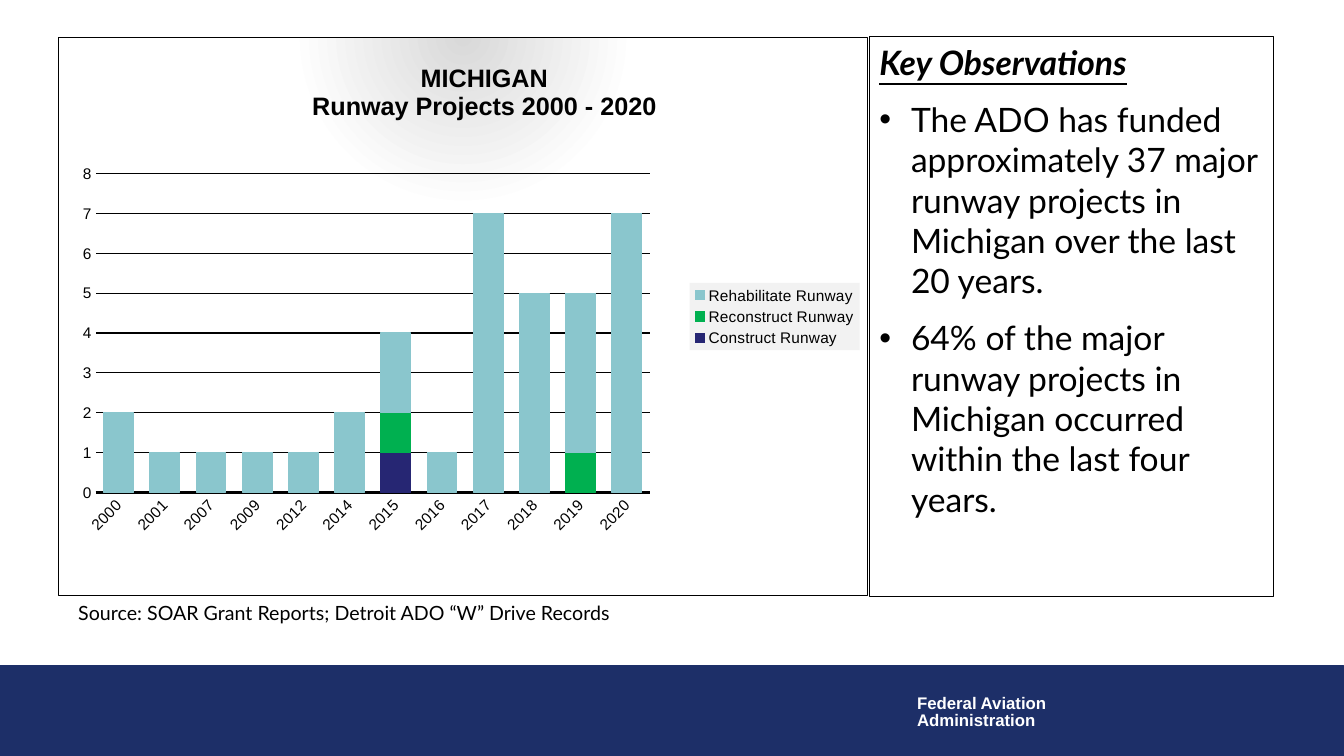
from dataclasses import dataclass

from lxml.etree import SubElement
from pptx import Presentation
from pptx.chart.data import CategoryChartData
from pptx.dml.color import RGBColor
from pptx.enum.chart import XL_CHART_TYPE, XL_LEGEND_POSITION, XL_TICK_MARK
from pptx.enum.shapes import MSO_SHAPE
from pptx.enum.text import MSO_AUTO_SIZE, MSO_ANCHOR, PP_ALIGN
from pptx.oxml import parse_xml
from pptx.oxml.ns import nsdecls, qn
from pptx.util import Emu, Pt

PX = 9525


@dataclass(frozen=True)
class Theme:
    ink: str = "000000"
    paper: str = "FFFFFF"
    banner: str = "1D2F68"
    construct: str = "262673"
    reconstruct: str = "00B050"
    rehabilitate: str = "8AC6CD"
    glow: str = "D9D9D9"
    legend: str = "F2F2F2"
    body_font: str = "Lato"
    chart_font: str = "Arial"
    body_size: int = 24
    title_size: int = 18
    source_size: int = 14
    agency_size: int = 12
    axis_size: int = 11
    thin: float = 0.75
    thick: float = 2


THEME = Theme()

YEARS = ["2000", "2001", "2007", "2009", "2012", "2014",
         "2015", "2016", "2017", "2018", "2019", "2020"]
PROJECTS = [
    ("Construct Runway", THEME.construct, {"2015": 1}),
    ("Reconstruct Runway", THEME.reconstruct, {"2015": 1, "2019": 1}),
    ("Rehabilitate Runway", THEME.rehabilitate,
     dict(zip(YEARS, [2, 1, 1, 1, 1, 2, 2, 1, 7, 5, 4, 7]))),
]
OBSERVATIONS = [
    "The ADO has funded approximately 37 major runway projects in Michigan "
    "over the last 20 years.",
    "64% of the major runway projects in Michigan occurred within the last "
    "four years.",
]


def px(*lengths):
    return [Emu(length * PX) for length in lengths]


def style_font(font, size, name, color=THEME.ink, bold=False, italic=False,
               underline=False):
    font.size, font.name = Pt(size), name
    font.bold, font.italic, font.underline = bold, italic, underline
    font.color.rgb = RGBColor.from_string(color)


def style_line(line, color=THEME.ink, width=THEME.thin):
    line.color.rgb = RGBColor.from_string(color)
    line.width = Pt(width)


def style_fill(fill, color):
    fill.solid()
    fill.fore_color.rgb = RGBColor.from_string(color)


def set_bullet(para, bullet, indent):
    """Hang the text behind a bullet; an empty bullet removes the inherited one."""
    properties = para._p.get_or_add_pPr()
    properties.set("marL", str(indent * PX))
    properties.set("indent", str(-indent * PX))
    if bullet:
        SubElement(properties, qn("a:buFont"), typeface="Arial")
        SubElement(properties, qn("a:buChar"), char=bullet)
    else:
        SubElement(properties, qn("a:buNone"))


def write(frame, text, size, name, bullet=None, indent=0, before=0,
          spacing=None, align=PP_ALIGN.LEFT, **font_format):
    """Fill the empty first paragraph of a frame, or add another one."""
    para = frame.paragraphs[0]
    if para.runs:
        para = frame.add_paragraph()
    if bullet is not None:
        set_bullet(para, bullet, indent)
    para.alignment = align
    para.space_before = Pt(before)
    if spacing:
        para.line_spacing = spacing
    span = para.add_run()
    span.text = text
    style_font(span.font, size, name, **font_format)


def add_text_box(page, place, wrap=True):
    frame = page.shapes.add_textbox(*px(*place)).text_frame
    frame.word_wrap = wrap
    return frame


def add_banner(page):
    banner = page.shapes.add_shape(MSO_SHAPE.RECTANGLE, *px(0, 634, 1280, 86))
    banner.shadow.inherit = False
    style_fill(banner.fill, THEME.banner)
    style_line(banner.line, THEME.banner)
    frame = add_text_box(page, (864, 658, 144, 42), wrap=False)
    for line in ("Federal Aviation", "Administration"):
        write(frame, line, THEME.agency_size, THEME.chart_font,
              color=THEME.paper, bold=True, spacing=0.85)


def add_observations(page):
    box = page.placeholders[1]
    box.left, box.top, box.width, box.height = px(828, 35, 385, 533)
    style_line(box.line)
    frame = box.text_frame
    frame.word_wrap = True
    frame.auto_size = MSO_AUTO_SIZE.NONE
    frame.vertical_anchor = MSO_ANCHOR.TOP
    write(frame, "Key Observations", THEME.body_size, THEME.body_font,
          bullet="", bold=True, italic=True, underline=True)
    for observation in OBSERVATIONS:
        write(frame, observation, THEME.body_size, THEME.body_font,
              bullet="•", indent=30, before=THEME.body_size / 2)


def place_part(chart, tag, inner=False, **fractions):
    """Set the manual layout of a chart part as fractions of the chart."""
    part = chart.element.find(f".//{qn(tag)}")
    for old in part.findall(qn("c:layout")):
        part.remove(old)
    layout = parse_xml(f"<c:layout {nsdecls('c')}><c:manualLayout/></c:layout>")
    if inner:
        SubElement(layout[0], qn("c:layoutTarget"), val="inner")
    for side in ("x", "y"):
        SubElement(layout[0], qn(f"c:{side}Mode"), val="edge")
    for side, fraction in fractions.items():
        SubElement(layout[0], qn(f"c:{side}"), val=str(fraction))
    overlay = part.find(qn("c:overlay"))
    part.insert(0 if overlay is None else part.index(overlay), layout)


def shape_properties(content):
    return parse_xml(f"<c:spPr {nsdecls('c', 'a')}>{content}</c:spPr>")


def solid(color):
    return f'<a:solidFill><a:srgbClr val="{color}"/></a:solidFill>'


def paint_chart_area(chart):
    """Give the chart a thin border and a soft glow behind its title."""
    stops = "".join(
        f'<a:gs pos="{position * 1000}"><a:srgbClr val="{color}"/></a:gs>'
        for position, color in ((0, THEME.glow), (35, THEME.paper),
                                (100, THEME.paper)))
    chart.element.find(qn("c:chart")).addnext(shape_properties(
        f'<a:gradFill><a:gsLst>{stops}</a:gsLst><a:path path="circle">'
        '<a:fillToRect l="50000" t="-80000" r="50000" b="180000"/></a:path>'
        f'</a:gradFill><a:ln w="{Pt(THEME.thin)}">{solid(THEME.ink)}</a:ln>'))


def style_axes(chart):
    years, counts = chart.category_axis, chart.value_axis
    for axis in (years, counts):
        axis.major_tick_mark = axis.minor_tick_mark = XL_TICK_MARK.NONE
        style_font(axis.tick_labels.font, THEME.axis_size, THEME.chart_font)
    style_line(years.format.line, width=THEME.thick)
    labels = chart.element.find(f".//{qn('c:catAx')}/{qn('c:txPr')}")
    labels.find(qn("a:bodyPr")).set("rot", "-2700000")
    counts.minimum_scale, counts.maximum_scale, counts.major_unit = 0, 8, 1
    counts.format.line.fill.background()
    style_line(counts.major_gridlines.format.line)


def add_project_chart(page):
    data = CategoryChartData(number_format="0")
    data.categories = YEARS
    for name, _, counts in PROJECTS:
        data.add_series(name, [counts.get(year) for year in YEARS])
    chart = page.shapes.add_chart(XL_CHART_TYPE.COLUMN_STACKED,
                                  *px(55, 35, 772, 533), data).chart
    style_font(chart.font, 10, THEME.chart_font)
    plot = chart.plots[0]
    plot.gap_width, plot.overlap, plot.vary_by_categories = 55, 100, False
    for series, (_, color, _) in zip(plot.series, PROJECTS):
        style_fill(series.format.fill, color)
        style_line(series.format.line, color)
    style_axes(chart)

    chart.has_title = True
    for line in ("MICHIGAN", "Runway Projects 2000 - 2020"):
        write(chart.chart_title.text_frame, line, THEME.title_size,
              THEME.chart_font, align=PP_ALIGN.CENTER, bold=True)
    chart.has_legend = True
    chart.legend.position = XL_LEGEND_POSITION.RIGHT
    chart.legend.include_in_layout = False
    style_font(chart.legend.font, THEME.axis_size, THEME.chart_font)
    chart.element.find(f".//{qn('c:legend')}/{qn('c:overlay')}").addnext(
        shape_properties(solid(THEME.legend)))
    place_part(chart, "c:title", x=0.31, y=0.04)
    place_part(chart, "c:legend", x=0.78, y=0.44, w=0.21, h=0.12)
    place_part(chart, "c:plotArea", inner=True, x=0.046, y=0.244, w=0.685, h=0.571)
    paint_chart_area(chart)


def main():
    deck = Presentation()
    deck.slide_width, deck.slide_height = px(1280, 720)
    page = deck.slides.add_slide(deck.slide_layouts[1])
    title = page.shapes.title.element
    title.getparent().remove(title)
    add_banner(page)
    write(add_text_box(page, (65, 568, 695, 33)),
          "Source: SOAR Grant Reports; Detroit ADO “W” Drive Records",
          THEME.source_size, THEME.body_font)
    add_observations(page)
    add_project_chart(page)
    deck.save("out.pptx")


if __name__ == "__main__":
    main()
